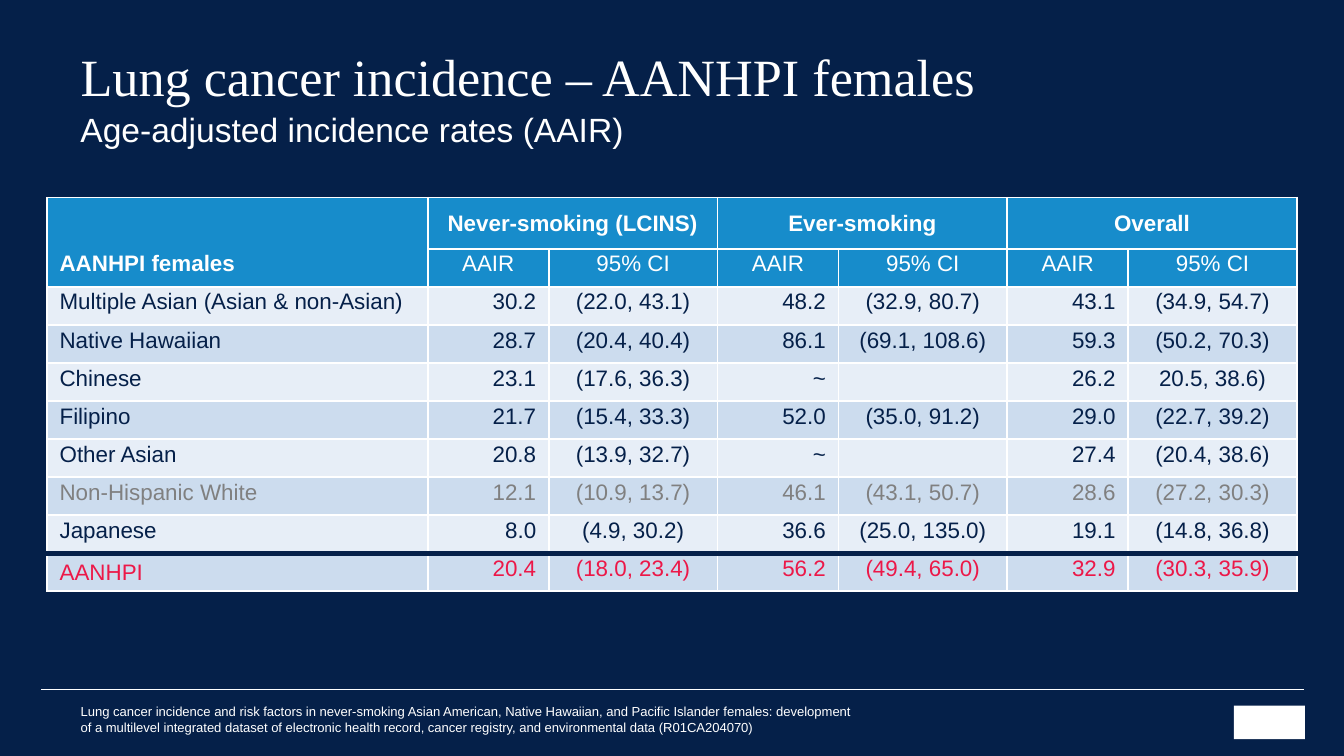
from dataclasses import dataclass

from lxml import etree
from pptx import Presentation
from pptx.dml.color import RGBColor
from pptx.enum import shapes, text
from pptx.oxml.ns import qn
from pptx.util import Pt


@dataclass(frozen=True)
class Theme:
    navy: str = "052049"
    white: str = "FFFFFF"
    blue: str = "178CCB"
    light: str = "E7EEF7"
    mid: str = "CCDCEE"
    gray: str = "808080"
    red: str = "EC1848"
    serif: str = "Times New Roman"
    sans: str = "Arial"
    title: int = 28
    subtitle: int = 18
    table: int = 12
    footnote: int = 7


theme = Theme()


def write(tf, words, size, color, font=theme.sans, bold=False):
    """Set the text of a frame, format its run and return the paragraph."""
    tf.text = words
    p = tf.paragraphs[0]
    for r in p.runs:
        r.font.name, r.font.size, r.font.bold = font, Pt(size), bold
        r.font.color.rgb = RGBColor.from_string(color)
    return p


def set_border(cell, side, color, width):
    """Add one cell border; a color of None hides that side."""
    ln = etree.SubElement(cell._tc.get_or_add_tcPr(), qn(f"a:ln{side}"), w=str(Pt(width)))
    if color is None:
        etree.SubElement(ln, qn("a:noFill"))
    else:
        fill = etree.SubElement(ln, qn("a:solidFill"))
        etree.SubElement(fill, qn("a:srgbClr"), val=color)


prs = Presentation()
prs.slide_width, prs.slide_height = Pt(720), Pt(405)
s = prs.slides.add_slide(prs.slide_layouts[5])
s.background.fill.solid()
s.background.fill.fore_color.rgb = RGBColor.from_string(theme.navy)

# Footer rule, logo block and study name
rule = s.shapes.add_connector(shapes.MSO_CONNECTOR.STRAIGHT, Pt(22), Pt(369.4), Pt(698.4), Pt(369.4))
rule.line.color.rgb = RGBColor.from_string(theme.white)
rule.line.width = Pt(0.25)
etree.SubElement(rule._element.spPr, qn("a:effectLst"))

logo = s.shapes.add_shape(shapes.MSO_SHAPE.RECTANGLE, Pt(661), Pt(378), Pt(38), Pt(18))
logo.shadow.inherit = False
logo.fill.solid()
logo.fill.fore_color.rgb = RGBColor.from_string(theme.white)
logo.line.fill.background()

footnote = s.shapes.add_textbox(Pt(43.2), Pt(385.2), Pt(414), Pt(8.6))
tf = footnote.text_frame
tf.word_wrap = True
tf.vertical_anchor = text.MSO_ANCHOR.BOTTOM
tf.margin_left = tf.margin_right = tf.margin_top = tf.margin_bottom = 0
write(tf, "Lung cancer incidence and risk factors in never-smoking Asian American, Native Hawaiian, "
      "and Pacific Islander females: development of a multilevel integrated dataset of electronic "
      "health record, cancer registry, and environmental data (R01CA204070)",
      theme.footnote, theme.white)

# Title and subtitle
title = s.shapes.title
title.left, title.top, title.width, title.height = Pt(36), Pt(25.2), Pt(643.7), Pt(36)
tf = title.text_frame
tf.auto_size = text.MSO_AUTO_SIZE.NONE
tf.vertical_anchor = text.MSO_ANCHOR.BOTTOM
p = write(tf, "Lung cancer incidence – AANHPI females", theme.title, theme.white, theme.serif)
p.alignment = text.PP_ALIGN.LEFT
p.line_spacing = 0.85

subtitle = s.shapes.add_textbox(Pt(36), Pt(54.7), Pt(643), Pt(28))
subtitle.text_frame.word_wrap = True
p = write(subtitle.text_frame, "Age-adjusted incidence rates (AAIR)", theme.subtitle, theme.white)
p.space_after = Pt(6)

# Incidence table
rows = [
    ["", "Never-smoking (LCINS)", "", "Ever-smoking", "", "Overall", ""],
    ["AANHPI females"] + ["AAIR", "95% CI"] * 3,
    ["Multiple Asian (Asian & non-Asian)", "30.2", "(22.0, 43.1)", "48.2", "(32.9, 80.7)", "43.1", "(34.9, 54.7)"],
    ["Native Hawaiian", "28.7", "(20.4, 40.4)", "86.1", "(69.1, 108.6)", "59.3", "(50.2, 70.3)"],
    ["Chinese", "23.1", "(17.6, 36.3)", "~", "", "26.2", "20.5, 38.6)"],
    ["Filipino", "21.7", "(15.4, 33.3)", "52.0", "(35.0, 91.2)", "29.0", "(22.7, 39.2)"],
    ["Other Asian", "20.8", "(13.9, 32.7)", "~", "", "27.4", "(20.4, 38.6)"],
    ["Non-Hispanic White", "12.1", "(10.9, 13.7)", "46.1", "(43.1, 50.7)", "28.6", "(27.2, 30.3)"],
    ["Japanese", "8.0", "(4.9, 30.2)", "36.6", "(25.0, 135.0)", "19.1", "(14.8, 36.8)"],
    ["AANHPI", "20.4", "(18.0, 23.4)", "56.2", "(49.4, 65.0)", "32.9", "(30.3, 35.9)"],
]
row_colors = {"Non-Hispanic White": theme.gray, "AANHPI": theme.red}
widths = [204] + [64.8, 90.4] * 3
heights = [27.4] + [20.4] * 9
total = len(rows) - 1

table = s.shapes.add_table(len(rows), len(widths), Pt(25.2), Pt(105.9),
                           Pt(sum(widths)), Pt(sum(heights))).table
for column, width in zip(table.columns, widths):
    column.width = Pt(width)
for row, height in zip(table.rows, heights):
    row.height = Pt(height)

for i, values in enumerate(rows):
    header = i < 2
    color = theme.white if header else row_colors.get(values[0], theme.navy)
    fill = theme.blue if header else (theme.light, theme.mid)[i % 2]
    for j, value in enumerate(values):
        cell = table.cell(i, j)
        cell.margin_left = cell.margin_right = Pt(6.75)
        cell.margin_top = cell.margin_bottom = Pt(1.5)
        if (i == 0 and j) or (i == total and j == 0):
            cell.vertical_anchor = text.MSO_ANCHOR.MIDDLE
        p = write(cell.text_frame, value, theme.table, color, bold=i == 0 or (i == 1 and j == 0))
        if not value:
            p._p.get_or_add_endParaRPr().set("sz", str(theme.table * 100))
        if j == 0:
            p.alignment = text.PP_ALIGN.LEFT
        elif header or j % 2 == 0:
            p.alignment = text.PP_ALIGN.CENTER
        else:
            p.alignment = text.PP_ALIGN.RIGHT

        for side in "LRTB":
            if (i, j, side) in ((0, 0, "B"), (1, 0, "T")):
                set_border(cell, side, None, 0)
            elif (i, side) in ((total - 1, "B"), (total, "T")):
                set_border(cell, side, theme.navy, 3)
            else:
                set_border(cell, side, theme.white, 1)
        cell.fill.solid()
        cell.fill.fore_color.rgb = RGBColor.from_string(fill)

for j in (1, 3, 5):
    table.cell(0, j).merge(table.cell(0, j + 1))

prs.save("out.pptx")
